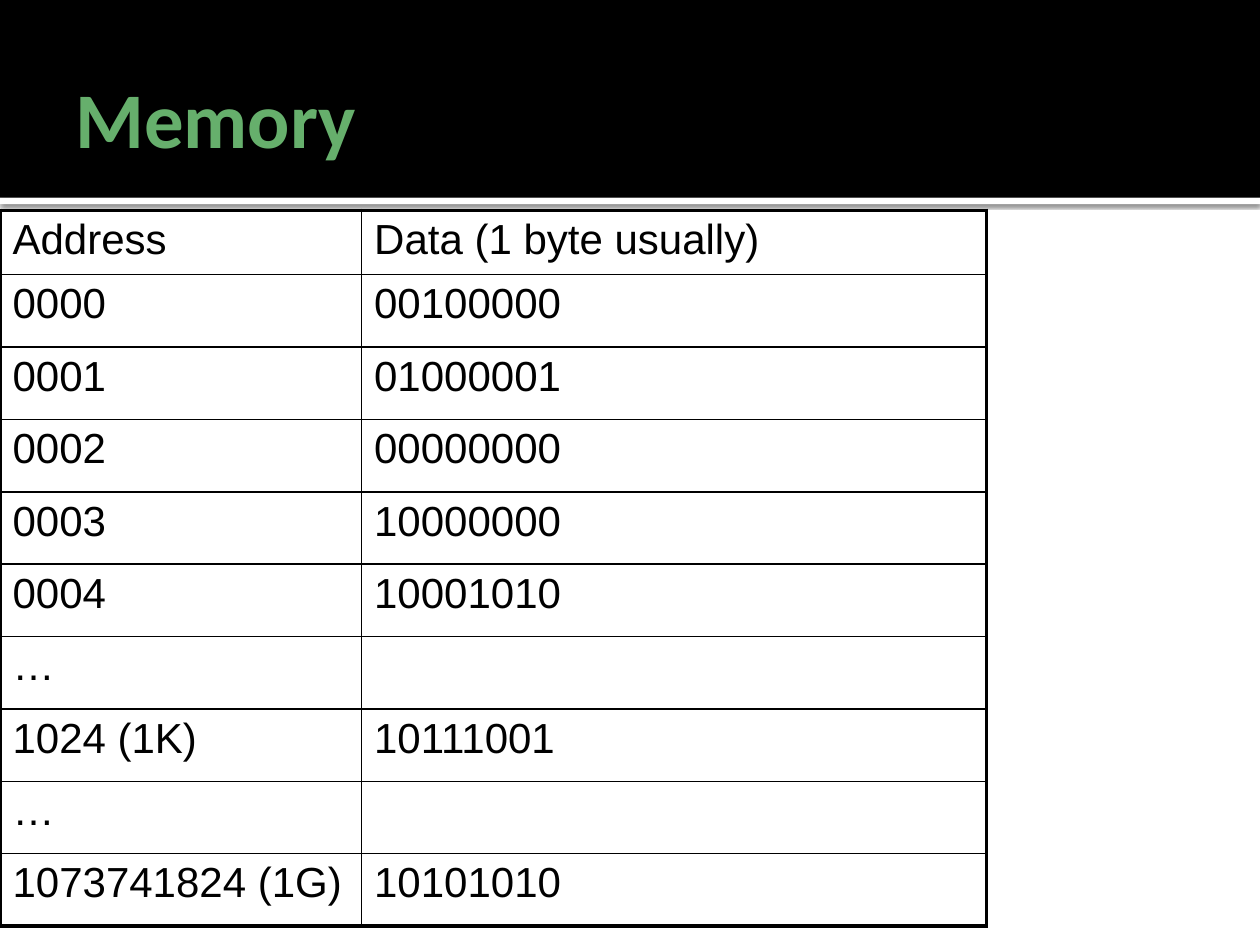
from dataclasses import dataclass
from lxml import etree
from pptx import Presentation
from pptx import util as u
from pptx.dml.color import RGBColor
from pptx.enum import shapes, text
from pptx.oxml.ns import qn


@dataclass(frozen=True)
class Theme:
    ink: str = "000000"
    paper: str = "FFFFFF"
    green: str = "66AF6C"
    head: tuple = ("Calibri", 45, True)
    body: tuple = ("Arial", 24, False)
    thin: float = 1
    thick: float = 2.25


def box(*dims):
    return [u.Inches(d) for d in dims]


def node(root, tag, **attrs):
    item = etree.SubElement(root, qn(tag))
    for key, val in attrs.items():
        item.set(key, str(val))
    return item


class Deck:
    def __init__(self, theme, wide, high):
        self.theme = theme
        self.file = Presentation()
        self.file.slide_width, self.file.slide_height = box(wide, high)
        self.slide = self.file.slides.add_slide(self.file.slide_layouts[6])

    def label(self, frame, words, face, color):
        run = frame.paragraphs[0].add_run()
        run.text = words
        name, size, bold = face
        style = {"name": name, "size": u.Pt(size), "bold": bold}
        for key, val in style.items():
            setattr(run.font, key, val)
        run.font.color.rgb = RGBColor.from_string(color)

    def bar(self, dims, color, shade=False):
        rect = self.slide.shapes.add_shape(shapes.MSO_SHAPE.RECTANGLE, *box(*dims))
        rect.fill.solid()
        rect.fill.fore_color.rgb = RGBColor.from_string(color)
        rect.line.fill.background()
        rect.shadow.inherit = False
        if shade:
            glow = node(rect._element.spPr.find(qn("a:effectLst")), "a:outerShdw",
                        blurRad=u.Pt(2.5), dist=u.Pt(0.8), dir=90 * 60000,
                        algn="tl", rotWithShape=0)
            tint = node(glow, "a:srgbClr", val=self.theme.ink)
            node(tint, "a:alpha", val=60000)

    def title(self, dims, words):
        frame = self.slide.shapes.add_textbox(*box(*dims)).text_frame
        style = {
            "word_wrap": True,
            "vertical_anchor": text.MSO_ANCHOR.MIDDLE,
            "margin_left": u.Inches(0.1),
            "margin_right": u.Inches(0.05),
            "margin_top": u.Inches(0.05),
            "margin_bottom": u.Inches(0.05),
        }
        for key, val in style.items():
            setattr(frame, key, val)
        self.label(frame, words, self.theme.head, self.theme.green)

    def edge(self, cell, sides):
        props = cell._tc.get_or_add_tcPr()
        for side, outer in sides.items():
            size = self.theme.thick if outer else self.theme.thin
            line = node(props, f"a:ln{side}", w=u.Pt(size))
            node(node(line, "a:solidFill"), "a:srgbClr", val=self.theme.ink)

    def table(self, dims, rows, widths, first):
        last, end = len(rows) - 1, len(widths) - 1
        grid = self.slide.shapes.add_table(last + 1, end + 1, *box(*dims)).table
        grid.first_row = grid.horz_banding = False
        for col, width in zip(grid.columns, widths):
            col.width = u.Inches(width)
        rest = (dims[3] - first) / last
        for r, row in enumerate(rows):
            grid.rows[r].height = u.Inches(rest if r else first)
            for c, words in enumerate(row):
                cell = grid.cell(r, c)
                self.edge(cell, {"L": c == 0, "R": c == end,
                                 "T": r == 0, "B": r == last})
                cell.fill.background()
                if words:
                    self.label(cell.text_frame, words, self.theme.body, self.theme.ink)

    def save(self):
        self.file.save("out.pptx")


def main():
    theme = Theme()
    deck = Deck(theme, 10, 7.5)
    deck.bar((0, 1.57, 10, 0.05), theme.paper, shade=True)
    deck.bar((0, 0, 10, 1.57), theme.ink)
    deck.title((0.5, 0.3, 9, 1.25), "Memory")
    memory = [
        ("Address", "Data (1 byte usually)"),
        ("0000", "00100000"),
        ("0001", "01000001"),
        ("0002", "00000000"),
        ("0003", "10000000"),
        ("0004", "10001010"),
        ("…", ""),
        ("1024 (1K)", "10111001"),
        ("…", ""),
        ("1073741824 (1G)", "10101010"),
    ]
    deck.table((0, 1.67, 7.83, 5.68), memory, (2.87, 4.96), 0.51)
    deck.save()


if __name__ == "__main__":
    main()
